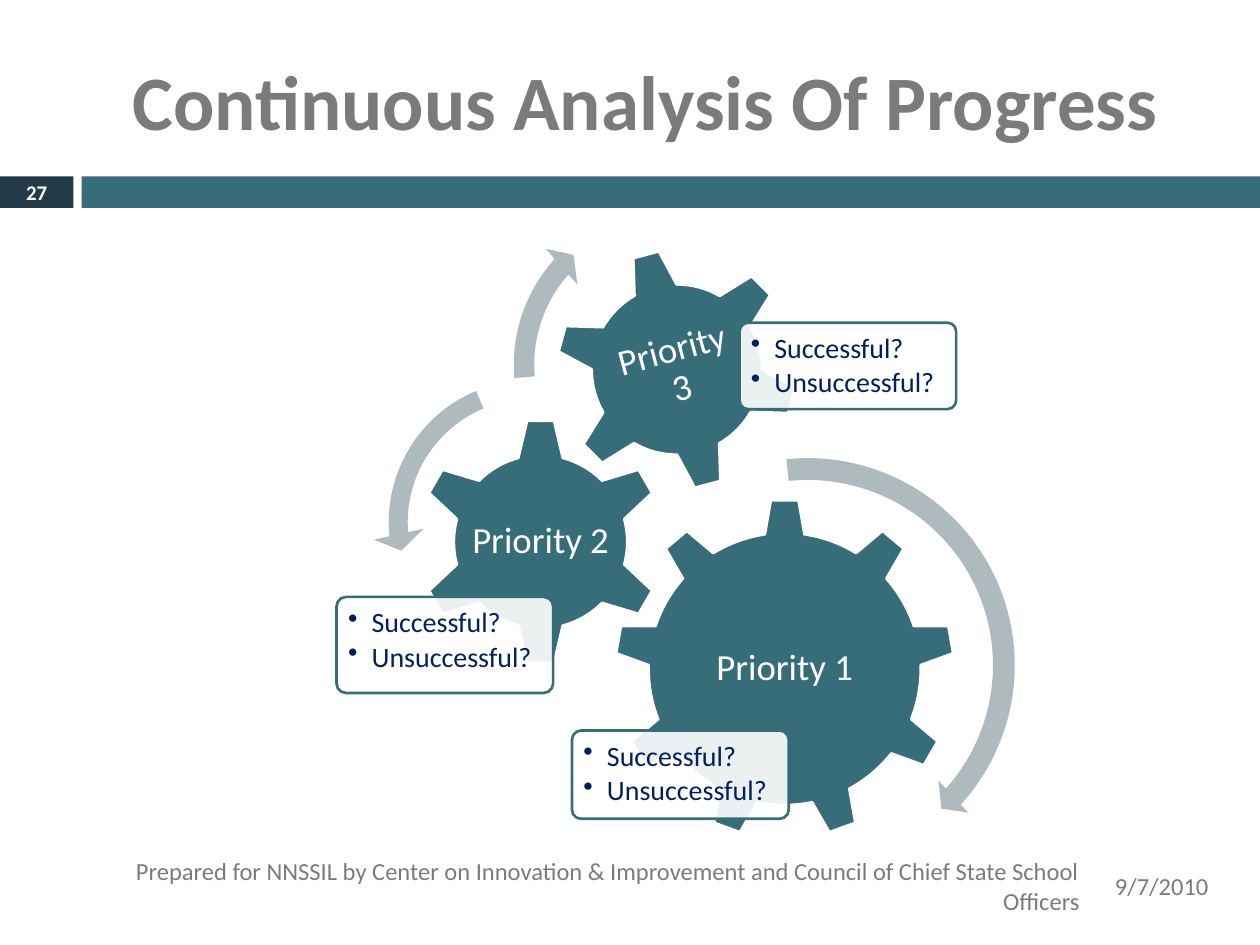
from pptx import Presentation
from pptx.dml.color import RGBColor
from pptx.enum.shapes import MSO_SHAPE
from pptx.enum.text import MSO_ANCHOR, PP_ALIGN
from pptx.util import Pt
from lxml.etree import SubElement
from pptx.oxml.ns import qn

TEAL, NAVY, WHITE = "376C79", "233B49", "FFFFFF"
GRAY, ARROW_GRAY, BULLET_BLUE = "7B7B7B", "AEBABE", "002060"

prs = Presentation()
prs.slide_width, prs.slide_height = Pt(720), Pt(540)
slide = prs.slides.add_slide(prs.slide_layouts[6])


def add_part(box, kind=None, fill=None, line=None, alpha=None, adj=(), rotation=0):
    """Add a preset shape, or a text box when no kind is given."""
    left, top, width, height = [Pt(v) for v in box]
    if kind is None:
        part = slide.shapes.add_textbox(left, top, width, height)
    else:
        part = slide.shapes.add_shape(kind, left, top, width, height)
        part.shadow.inherit = False
        part.fill.solid()
        part.fill.fore_color.rgb = RGBColor.from_string(fill)
        if alpha:
            color = part.fill._xPr.find(qn("a:solidFill"))[0]
            SubElement(color, qn("a:alpha"), val=str(alpha * 1000))
        if line:
            part.line.color.rgb = RGBColor.from_string(line)
            part.line.width = Pt(1.5)
        else:
            part.line.fill.background()
        for i, value in enumerate(adj):
            part.adjustments[i] = value
    part.rotation = rotation
    return part


def write(part, *lines, size, color, bold=False, align=PP_ALIGN.CENTER,
          anchor=MSO_ANCHOR.MIDDLE, inset=None, spacing=None, after=0, bullet=False):
    frame = part.text_frame
    frame.word_wrap = True
    frame.vertical_anchor = anchor
    if inset is not None:
        frame.margin_left = frame.margin_right = Pt(inset)
        frame.margin_top = frame.margin_bottom = Pt(inset)
    for i, text in enumerate(lines):
        paragraph = frame.add_paragraph() if i else frame.paragraphs[0]
        paragraph.alignment = align
        paragraph.space_after = Pt(after)
        if spacing:
            paragraph.line_spacing = spacing
        if bullet:
            props = paragraph._p.get_or_add_pPr()
            props.set("marL", str(Pt(13.5)))
            props.set("indent", str(-Pt(13.5)))
            SubElement(props, qn("a:buChar"), char="•")
        run = paragraph.add_run()
        run.text = text
        run.font.name, run.font.size, run.font.bold = "Calibri", Pt(size), bold
        run.font.color.rgb = RGBColor.from_string(color)


# Header: title, slide number block and band
add_part((0, 100.8, 42, 18), MSO_SHAPE.RECTANGLE, NAVY)
add_part((46.6, 100.8, 673.4, 18), MSO_SHAPE.RECTANGLE, TEAL)
write(add_part((48, 18, 642, 78)), "Continuous Analysis Of Progress",
      size=44, color=GRAY, bold=True)
write(add_part((0, 100.1, 42, 19.4)), "27", size=11.9, color=WHITE, bold=True)

# Gears with their labels and callouts: name, kind, gear, label, rotation, callout
priorities = [
    ("Priority 1", MSO_SHAPE.GEAR_9, (351.2, 285.1, 194.4, 194.4),
     (351.2, 285.1, 194.4, 194.4), 0, (326.9, 417.5, 123.8, 50.4)),
    ("Priority 2", MSO_SHAPE.GEAR_6, (238.1, 238.8, 141.6, 141.6),
     (238.1, 238.8, 141.6, 141.6), 0, (192.3, 341.1, 123.8, 54.9)),
    ("Priority 3", MSO_SHAPE.GEAR_6, (317.3, 141.7, 139, 139),
     (347.8, 172.2, 78, 78), -15, (422.6, 184.4, 123.8, 49.4)),
]
for name, kind, gear, label, rotation, callout in priorities:
    add_part(gear, kind, TEAL, line=WHITE, rotation=rotation)
    write(add_part(label, rotation=rotation), name, size=21, color=WHITE,
          inset=2, spacing=0.9)
    outcomes = add_part(callout, MSO_SHAPE.ROUNDED_RECTANGLE, WHITE, line=TEAL,
                        alpha=90, adj=[0.1])
    write(outcomes, "Successful?", "Unsuccessful?", size=16, color=BULLET_BLUE,
          align=PP_ALIGN.LEFT, anchor=MSO_ANCHOR.TOP, inset=5, spacing=0.9,
          after=2.4, bullet=True)

# Arrows showing which way each gear turns
turns = [
    (MSO_SHAPE.CIRCULAR_ARROW, (337, 255.6, 249.1, 249.1),
     [0.05, 2.99, 25.23, 158.47, 0.05]),
    (MSO_SHAPE.LEFT_CIRCULAR_ARROW, (213.1, 208.1, 180.7, 180.7),
     [0.06, 4.3, 104.89, 148.38, 0.08]),
    (MSO_SHAPE.CIRCULAR_ARROW, (285.8, 110.9, 195.1, 195.1),
     [0.06, 3.94, 133.14, 105.08, 0.07]),
]
for kind, box, adj in turns:
    add_part(box, kind, ARROW_GRAY, adj=adj)

# Footer
write(add_part((630, 491.8, 84, 28.8)), "9/7/2010", size=14, color=GRAY,
      align=PP_ALIGN.LEFT)
write(add_part((24, 491.8, 600, 28.8)),
      "Prepared for NNSSIL by Center on Innovation & Improvement and "
      "Council of Chief State School Officers",
      size=14, color=GRAY, align=PP_ALIGN.RIGHT)

prs.save("out.pptx")
